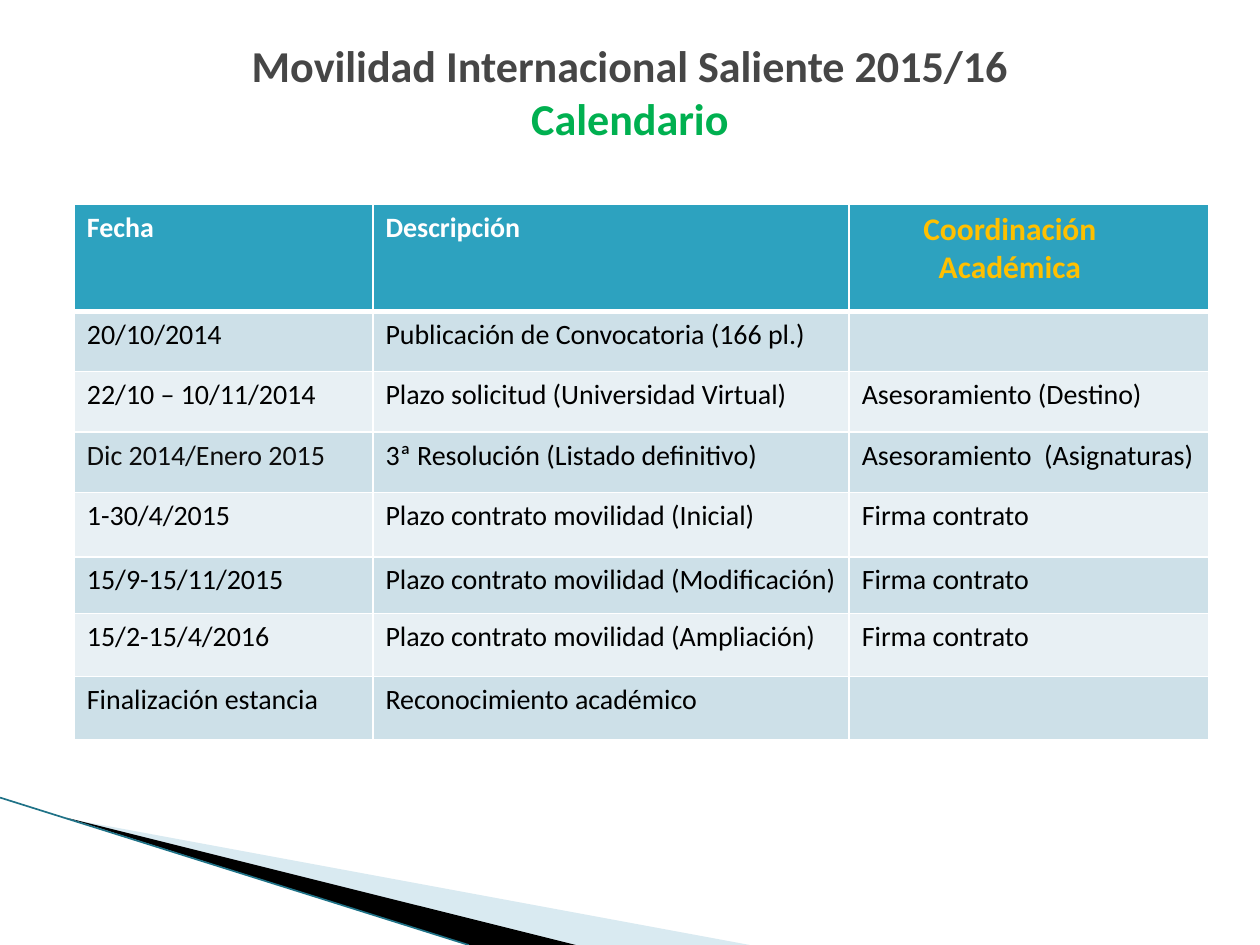
from collections import namedtuple

from lxml.etree import SubElement
from pptx import Presentation
from pptx.dml.color import RGBColor
from pptx.enum.shapes import MSO_CONNECTOR
from pptx.enum.text import MSO_ANCHOR, MSO_AUTO_SIZE, PP_ALIGN
from pptx.oxml.ns import qn
from pptx.util import Inches, Pt

Box = namedtuple("Box", "left top width height")
UNIT = Inches(0.1)
FONT = "Calibri"
WHITE = RGBColor(0xFF, 0xFF, 0xFF)
BLACK = RGBColor(0x00, 0x00, 0x00)
NEAR_BLACK = RGBColor(0x0D, 0x0D, 0x0D)
GRAY = RGBColor(0x46, 0x46, 0x46)
GREEN = RGBColor(0x00, 0xB0, 0x50)
GOLD = RGBColor(0xFF, 0xC0, 0x00)
TEAL = RGBColor(0x2D, 0xA2, 0xBF)
DARK_TEAL = RGBColor(0x1F, 0x72, 0x87)
SKY = RGBColor(0xA0, 0xCB, 0xDC)
BANDS = (RGBColor(0xCD, 0xE0, 0xE8), RGBColor(0xE8, 0xF0, 0xF4))

COLUMN_WIDTHS = (23.7, 37.8, 28.5)
ROW_HEIGHTS = (8.5, 4.8, 4.8, 4.8, 5.1, 4.5, 5, 5)
HEADINGS = ("Fecha", "Descripción", "")
CALENDAR = (
    ("20/10/2014", "Publicación de Convocatoria (166 pl.)", ""),
    ("22/10 – 10/11/2014", "Plazo solicitud (Universidad Virtual)", "Asesoramiento (Destino)"),
    ("Dic 2014/Enero 2015", "3ª Resolución (Listado definitivo)", "Asesoramiento  (Asignaturas)"),
    ("1-30/4/2015", "Plazo contrato movilidad (Inicial)", "Firma contrato"),
    ("15/9-15/11/2015", "Plazo contrato movilidad (Modificación)", "Firma contrato"),
    ("15/2-15/4/2016", "Plazo contrato movilidad (Ampliación)", "Firma contrato"),
    ("Finalización estancia", "Reconocimiento académico", ""),
)


def grid(*cells):
    """Turn counts of grid units into slide lengths."""
    return [round(cell * UNIT) for cell in cells]


def add_span(para, text, size, color, bold=False):
    """Append one formatted run to a paragraph."""
    span = para.add_run()
    span.text = text
    span.font.name = FONT
    span.font.size = Pt(size)
    span.font.bold = bold
    span.font.color.rgb = color


def add_title(page, box):
    """Set the two-line title in its placeholder."""
    title = page.shapes.title
    title.left, title.top, title.width, title.height = grid(*box)
    frame = title.text_frame
    frame.auto_size = MSO_AUTO_SIZE.NONE
    frame.vertical_anchor = MSO_ANCHOR.MIDDLE
    para = frame.paragraphs[0]
    para.alignment = PP_ALIGN.CENTER
    add_span(para, "Movilidad Internacional Saliente 2015/16", 25.2, GRAY, True)
    para.add_line_break()
    add_span(para, "Calendario", 25.2, GREEN, True)


def add_wedge(page, box, points, color, opacity=100):
    """Draw a filled wedge from points given relative to its box."""
    corners = [grid(box.left + x, box.top + y) for x, y in points]
    builder = page.shapes.build_freeform(*corners[0])
    builder.add_line_segments(corners[1:], close=True)
    wedge = builder.convert_to_shape()
    wedge.shadow.inherit = False
    wedge.fill.solid()
    wedge.fill.fore_color.rgb = color
    wedge.line.fill.background()
    if opacity < 100:
        tone = next(wedge.fill._xPr.iter(qn("a:srgbClr")))
        SubElement(tone, qn("a:alpha"), val=str(opacity * 1000))


def add_corner(page, box):
    """Draw the wedges and the edge line of the lower left corner."""
    right, bottom = box.width, box.height
    add_wedge(page, box, [(5.5, 1.7), (right, bottom), (45.6, bottom)], SKY, 40)
    add_wedge(page, box, [(5.3, 1.6), (45.7, bottom), (37.2, bottom)], BLACK)
    ends = grid(box.left, box.top, box.left + 37.2, box.top + bottom)
    edge = page.shapes.add_connector(MSO_CONNECTOR.STRAIGHT, *ends)
    edge.line.color.rgb = DARK_TEAL
    edge.line.width = Pt(0.95)
    SubElement(edge._element.spPr, qn("a:effectLst"))


def style_cell(cell, fill, top, bottom):
    """Give a cell its white borders and its fill."""
    properties = cell._tc.get_or_add_tcPr()
    for side, width in (("L", 1), ("R", 1), ("T", top), ("B", bottom)):
        border = SubElement(properties, qn(f"a:ln{side}"), w=str(Pt(width)))
        paint = SubElement(border, qn("a:solidFill"))
        SubElement(paint, qn("a:srgbClr"), val=str(WHITE))
    cell.fill.solid()
    cell.fill.fore_color.rgb = fill


def add_coordination_heading(cell):
    """Write the staggered two-line heading of the last column."""
    frame = cell.text_frame
    first, second = frame.paragraphs[0], frame.add_paragraph()
    first._p.get_or_add_pPr().set("marR", str(Inches(0.3)))
    for para, word in ((first, "Coordinación"), (second, "Académica")):
        para.alignment = PP_ALIGN.CENTER
        add_span(para, word, 18, GOLD, True)


def add_calendar(page, box):
    """Build the table of dates, steps and coordination tasks."""
    rows = (HEADINGS,) + CALENDAR
    table = page.shapes.add_table(len(rows), len(HEADINGS), *grid(*box)).table
    for column, width in zip(table.columns, grid(*COLUMN_WIDTHS)):
        column.width = width
    for row, height in zip(table.rows, grid(*ROW_HEIGHTS)):
        row.height = height
    for i, texts in enumerate(rows):
        fill = BANDS[(i - 1) % 2] if i else TEAL
        for j, text in enumerate(texts):
            cell = table.cell(i, j)
            style_cell(cell, fill, 3 if i == 1 else 1, 3 if i == 0 else 1)
            color = NEAR_BLACK if (i, j) == (3, 0) else BLACK
            if text:
                add_span(cell.text_frame.paragraphs[0], text, 16, color if i else WHITE, i == 0)
    add_coordination_heading(table.cell(0, 2))


def main():
    """Build and save the deck."""
    deck = Presentation()
    deck.slide_width, deck.slide_height = grid(100, 75)
    page = deck.slides.add_slide(deck.slide_layouts[5])
    add_corner(page, Box(0, 63.3, 59.5, 11.7))
    add_calendar(page, Box(5.9, 16.2, 90, 42.5))
    add_title(page, Box(5, 3, 90, 8.5))
    deck.save("out.pptx")


if __name__ == "__main__":
    main()
